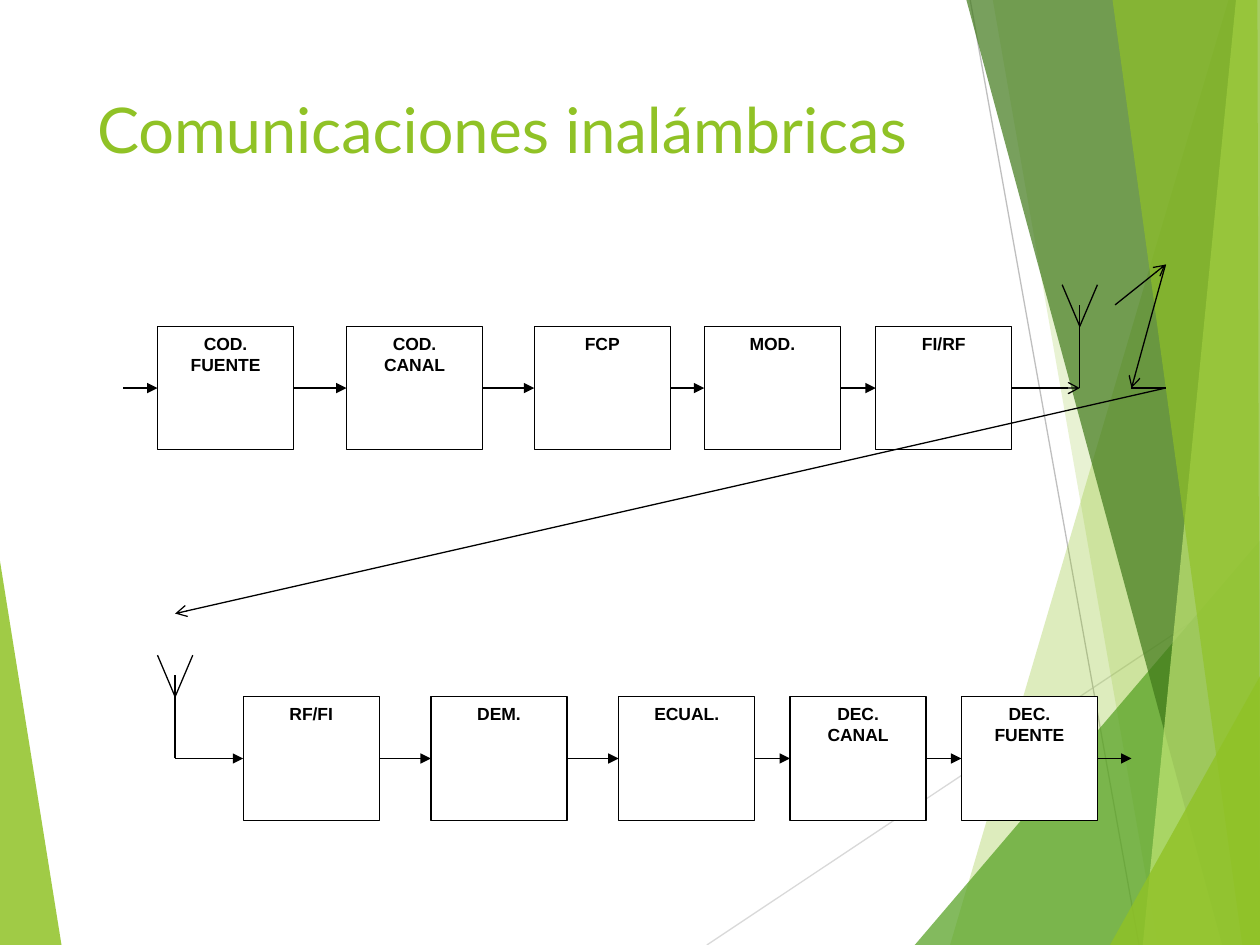
from dataclasses import dataclass

import pptx
import pptx.dml.color
import pptx.enum.shapes
import pptx.enum.text
import pptx.oxml
import pptx.oxml.ns
import pptx.util
from pptx.util import Inches

RGBColor = pptx.dml.color.RGBColor
BLACK = RGBColor(0x00, 0x00, 0x00)
WHITE = RGBColor(0xFF, 0xFF, 0xFF)
GREY = RGBColor(0xBF, 0xBF, 0xBF)
LIGHT_GREY = RGBColor(0xD9, 0xD9, 0xD9)
LIME = RGBColor(0x90, 0xC2, 0x26)
GREEN = RGBColor(0x54, 0xA0, 0x21)
DARK_GREEN = RGBColor(0x3F, 0x78, 0x19)
PALE_LIME = RGBColor(0xC0, 0xE4, 0x74)

BOX_WIDTH, BOX_HEIGHT = 1.08, 0.98
Point = tuple[float, float]


@dataclass
class Facet:
    color: RGBColor
    opacity: int
    points: list[Point]


@dataclass
class Block:
    left: float
    label: str


@dataclass
class Chain:
    """A row of blocks wired from left to right."""
    top: float
    entry: float
    exit: float
    exit_head: str
    blocks: list[Block]

    @property
    def middle(self) -> float:
        return self.top + BOX_HEIGHT / 2


LEFT_FACET = Facet(LIME, 85, [(-0.01, 4.39), (0.49, 7.51), (-0.01, 7.5)])
RIGHT_FACETS = [
    Facet(LIME, 30, [(9.75, 0), (7.54, 7.5), (10.02, 7.51), (10.01, 0)]),
    Facet(LIME, 20, [(7.88, 0), (9.19, 7.5), (10.01, 7.5), (10.01, 0)]),
    Facet(GREEN, 72, [(7.26, 7.5), (10, 4.29), (10.01, 7.5)]),
    Facet(DARK_GREEN, 70, [(7.67, 0), (9.7, 7.5), (10.01, 7.5), (10.01, 0)]),
    Facet(PALE_LIME, 70, [(9.81, 0), (9.07, 7.5), (10.01, 7.5), (10, 0)]),
    Facet(LIME, 65, [(8.83, 0), (9.86, 7.5), (10, 7.5), (9.98, 0)]),
    Facet(LIME, 80, [(8.81, 7.5), (10.01, 5.35), (10.01, 7.5)]),
]

TRANSMITTER = Chain(2.59, 0.98, 8.57, "arrow", [
    Block(1.25, "COD.\nFUENTE"),
    Block(2.75, "COD.\nCANAL"),
    Block(4.24, "FCP"),
    Block(5.59, "MOD."),
    Block(6.95, "FI/RF"),
])
RECEIVER = Chain(5.53, 1.39, 8.98, "triangle", [
    Block(1.93, "RF/FI"),
    Block(3.42, "DEM."),
    Block(4.91, "ECUAL."),
    Block(6.27, "DEC.\nCANAL"),
    Block(7.63, "DEC.\nFUENTE"),
])


def add_line(shapes, start: Point, end: Point, head: str = "", color: RGBColor = BLACK) -> None:
    connector = shapes.add_connector(
        pptx.enum.shapes.MSO_CONNECTOR.STRAIGHT,
        Inches(start[0]), Inches(start[1]), Inches(end[0]), Inches(end[1]))
    connector.line.color.rgb = color
    connector.line.width = pptx.util.Pt(0.75)
    if head:
        tail_end = pptx.oxml.parse_xml(
            f'<a:tailEnd {pptx.oxml.ns.nsdecls("a")} type="{head}"/>')
        connector.line._get_or_add_ln().append(tail_end)
    connector._element.spPr.append(
        pptx.oxml.parse_xml(f'<a:effectLst {pptx.oxml.ns.nsdecls("a")}/>'))


def add_facet(shapes, facet: Facet) -> None:
    points = [(Inches(x), Inches(y)) for x, y in facet.points]
    builder = shapes.build_freeform(*points[0])
    builder.add_line_segments(points[1:], close=True)
    shape = builder.convert_to_shape()
    shape.shadow.inherit = False
    shape.line.fill.background()
    shape.fill.solid()
    shape.fill.fore_color.rgb = facet.color
    color = shape._element.spPr.find(".//" + pptx.oxml.ns.qn("a:srgbClr"))
    color.append(pptx.oxml.parse_xml(
        f'<a:alpha {pptx.oxml.ns.nsdecls("a")} val="{facet.opacity * 1000}"/>'))


def add_block(shapes, block: Block, top: float) -> None:
    shape = shapes.add_shape(
        pptx.enum.shapes.MSO_SHAPE.RECTANGLE,
        Inches(block.left), Inches(top), Inches(BOX_WIDTH), Inches(BOX_HEIGHT))
    shape.shadow.inherit = False
    shape.fill.solid()
    shape.fill.fore_color.rgb = WHITE
    shape.line.color.rgb = BLACK
    shape.line.width = pptx.util.Pt(0.75)
    frame = shape.text_frame
    frame.vertical_anchor = pptx.enum.text.MSO_ANCHOR.TOP
    frame.text = block.label
    for paragraph in frame.paragraphs:
        paragraph.alignment = pptx.enum.text.PP_ALIGN.CENTER
        font = paragraph.font
        font.name, font.size, font.bold = "Arial", pptx.util.Pt(10), True
        font.color.rgb = BLACK


def add_chain(shapes, chain: Chain) -> None:
    start = chain.entry
    for block in chain.blocks:
        add_block(shapes, block, chain.top)
        add_line(shapes, (start, chain.middle), (block.left, chain.middle), "triangle")
        start = block.left + BOX_WIDTH
    add_line(shapes, (start, chain.middle), (chain.exit, chain.middle), chain.exit_head)


def add_antenna(shapes, x: float, chain: Chain) -> None:
    add_line(shapes, (x, chain.middle), (x, chain.top - 0.17))
    for side in (-0.14, 0.14):
        add_line(shapes, (x, chain.top), (x + side, chain.top - 0.33))


def add_radio_path(shapes) -> None:
    """Zigzag from the transmitting antenna to the receiving one."""
    peak, low, turn = (9.25, 2.1), (8.98, 3.08), (9.25, 3.08)
    add_line(shapes, (8.85, 2.42), peak, "arrow")
    add_line(shapes, peak, low, "arrow")
    add_line(shapes, low, turn)
    add_line(shapes, turn, (RECEIVER.entry, 4.87), "arrow")


def add_title(slide) -> None:
    title = slide.shapes.title
    title.left, title.top = Inches(0.67), Inches(0.67)
    title.width, title.height = Inches(6.94), Inches(1.44)
    title.text_frame.text = "Comunicaciones inalámbricas"
    title.text_frame.vertical_anchor = pptx.enum.text.MSO_ANCHOR.TOP
    paragraph = title.text_frame.paragraphs[0]
    paragraph.alignment = pptx.enum.text.PP_ALIGN.LEFT
    paragraph.font.name, paragraph.font.size = "Lato", pptx.util.Pt(36)
    paragraph.font.color.rgb = LIME


def main() -> None:
    presentation = pptx.Presentation()
    presentation.slide_width, presentation.slide_height = Inches(10), Inches(7.5)
    slide = presentation.slides.add_slide(
        presentation.slide_layouts.get_by_name("Title Only"))
    shapes = slide.shapes
    add_title(slide)
    add_facet(shapes, LEFT_FACET)
    add_line(shapes, (5.61, 7.5), (10.01, 4.57), color=LIGHT_GREY)
    add_line(shapes, (7.7, 0), (9.04, 7.5), color=GREY)
    for facet in RIGHT_FACETS:
        add_facet(shapes, facet)
    for chain in (TRANSMITTER, RECEIVER):
        add_chain(shapes, chain)
    add_antenna(shapes, TRANSMITTER.exit, TRANSMITTER)
    add_antenna(shapes, RECEIVER.entry, RECEIVER)
    add_radio_path(shapes)
    presentation.save("out.pptx")


if __name__ == "__main__":
    main()
